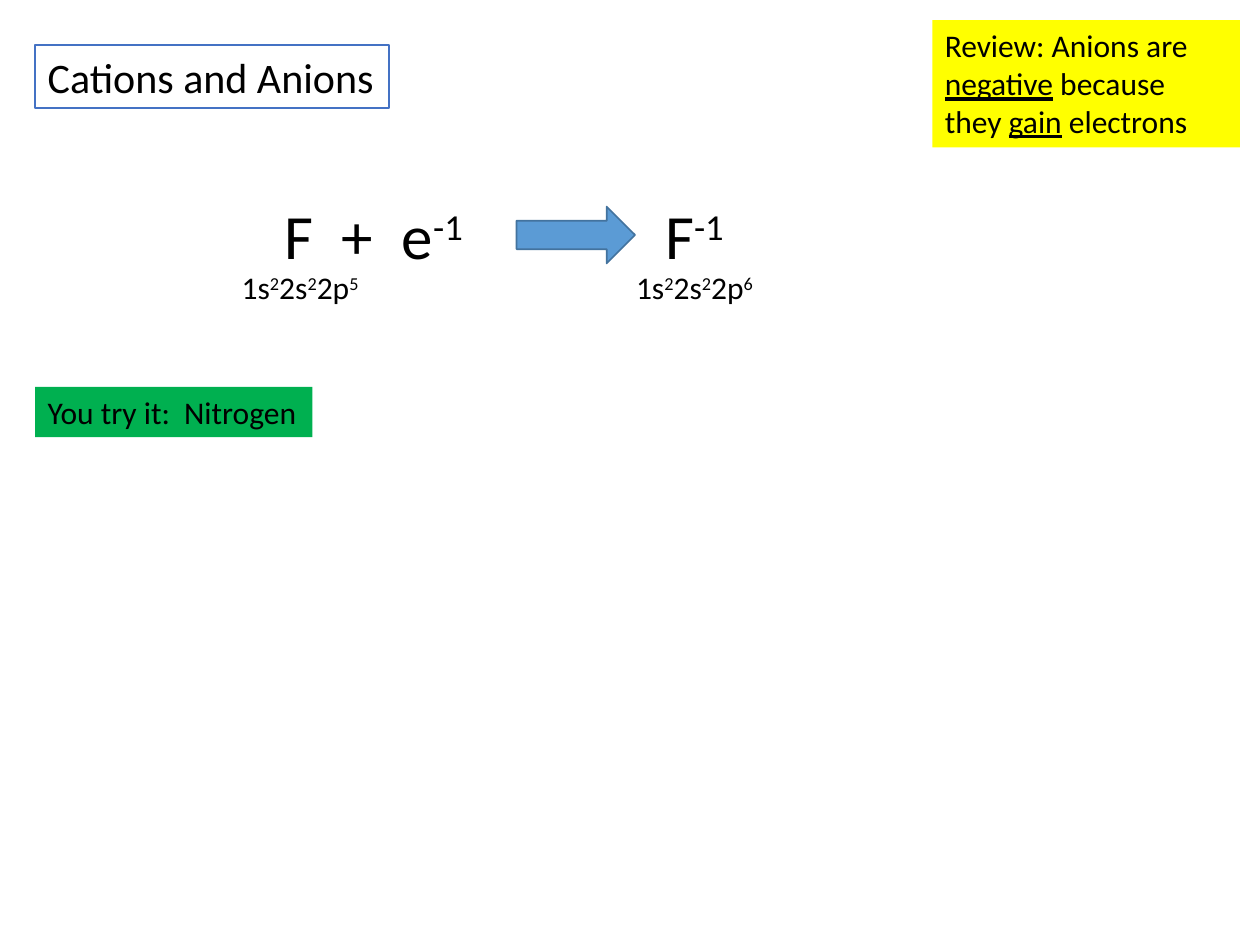
"""Build the Cations and Anions slide on fluorine gaining an electron."""
from dataclasses import dataclass
from typing import NamedTuple, Optional

from pptx import Presentation
from pptx.dml.color import RGBColor
from pptx.enum.shapes import MSO_SHAPE
from pptx.enum.text import MSO_AUTO_SIZE
from pptx.shapes.autoshape import Shape
from pptx.util import Inches, Pt


@dataclass(frozen=True)
class Theme:
    font: str = "Calibri"
    ink: str = "000000"
    paper: str = "FFFFFF"
    review: str = "FFFF00"
    practice: str = "00B050"
    title_edge: str = "4472C4"
    arrow: str = "5B9BD5"
    arrow_edge: str = "43739E"
    body: int = 18
    heading: int = 24
    formula: int = 36
    edge: int = 1


THEME = Theme()


class Span(NamedTuple):
    text: str
    underline: bool = False
    raised: bool = False


class Box(NamedTuple):
    left: float
    top: float
    width: float
    height: float


@dataclass(frozen=True)
class Label:
    box: Box
    spans: list[Span]
    size: int = THEME.body
    fill: Optional[str] = None
    line: Optional[str] = None
    wrap: bool = False


def paint(shape: Shape, fill: Optional[str], line: Optional[str]) -> None:
    if fill:
        shape.fill.solid()
        shape.fill.fore_color.rgb = RGBColor.from_string(fill)
    if line:
        shape.line.color.rgb = RGBColor.from_string(line)
        shape.line.width = Pt(THEME.edge)


def draw_label(shapes, label: Label) -> None:
    panel = shapes.add_textbox(*map(Inches, label.box))
    paint(panel, label.fill, label.line)
    frame = panel.text_frame
    frame.word_wrap = label.wrap
    frame.auto_size = MSO_AUTO_SIZE.SHAPE_TO_FIT_TEXT
    for span in label.spans:
        run = frame.paragraphs[0].add_run()
        run.text = span.text
        formats = {"name": THEME.font, "size": Pt(label.size)}
        if span.underline:
            formats["underline"] = True
        for attribute, value in formats.items():
            setattr(run.font, attribute, value)
        run.font.color.rgb = RGBColor.from_string(THEME.ink)
        if span.raised:
            run.font._element.set("baseline", "30000")


def draw_arrow(shapes, box: Box) -> None:
    arrow = shapes.add_shape(MSO_SHAPE.RIGHT_ARROW, *map(Inches, box))
    arrow.shadow.inherit = False
    paint(arrow, THEME.arrow, THEME.arrow_edge)


def charged(symbol: str) -> list[Span]:
    return [Span(symbol), Span("-1", raised=True)]


def configuration(left: float, outer_electrons: str) -> Label:
    orbitals = (("1s", "2"), ("2s", "2"), ("2p", outer_electrons))
    spans = [span for orbital, count in orbitals
             for span in (Span(orbital), Span(count, raised=True))]
    return Label(Box(left, 2.08, 1.17, 0.4), spans)


REVIEW = Label(
    Box(7.4, 0.16, 2.44, 1.01),
    [Span("Review: Anions are "), Span("negative", underline=True),
     Span(" because they "), Span("gain", underline=True), Span(" electrons")],
    fill=THEME.review, wrap=True)
REACTANTS = Label(Box(2.16, 1.51, 1.66, 0.71), charged("F  +  e"), THEME.formula)
ION = Label(Box(5.18, 1.51, 0.71, 0.71), charged("F"), THEME.formula)
PRACTICE = Label(Box(0.28, 3.07, 2.2, 0.4), [Span("You try it:  Nitrogen")],
                 fill=THEME.practice)
TITLE = Label(Box(0.28, 0.36, 2.81, 0.5), [Span("Cations and Anions")],
              THEME.heading, THEME.paper, THEME.title_edge)


def main() -> None:
    deck = Presentation()
    deck.slide_width, deck.slide_height = Inches(10), Inches(7.5)
    slide = deck.slides.add_slide(deck.slide_layouts[6])
    draw_label(slide.shapes, REVIEW)
    equation = slide.shapes.add_group_shape().shapes
    draw_label(equation, REACTANTS)
    draw_arrow(equation, Box(4.1, 1.64, 0.94, 0.45))
    for label in (ION, configuration(1.82, "5"), configuration(4.95, "6")):
        draw_label(equation, label)
    for label in (PRACTICE, TITLE):
        draw_label(slide.shapes, label)
    deck.save("out.pptx")


if __name__ == "__main__":
    main()
